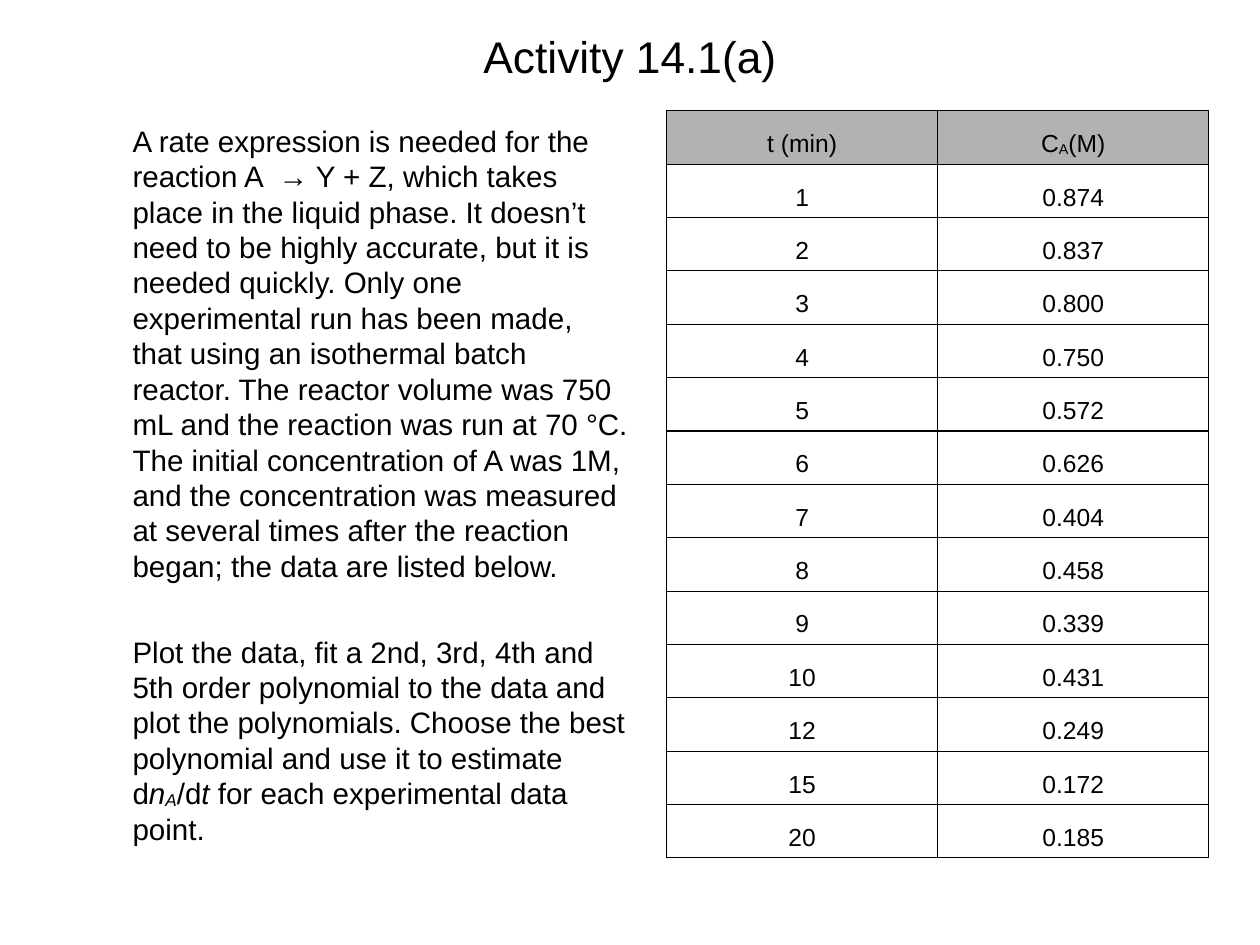
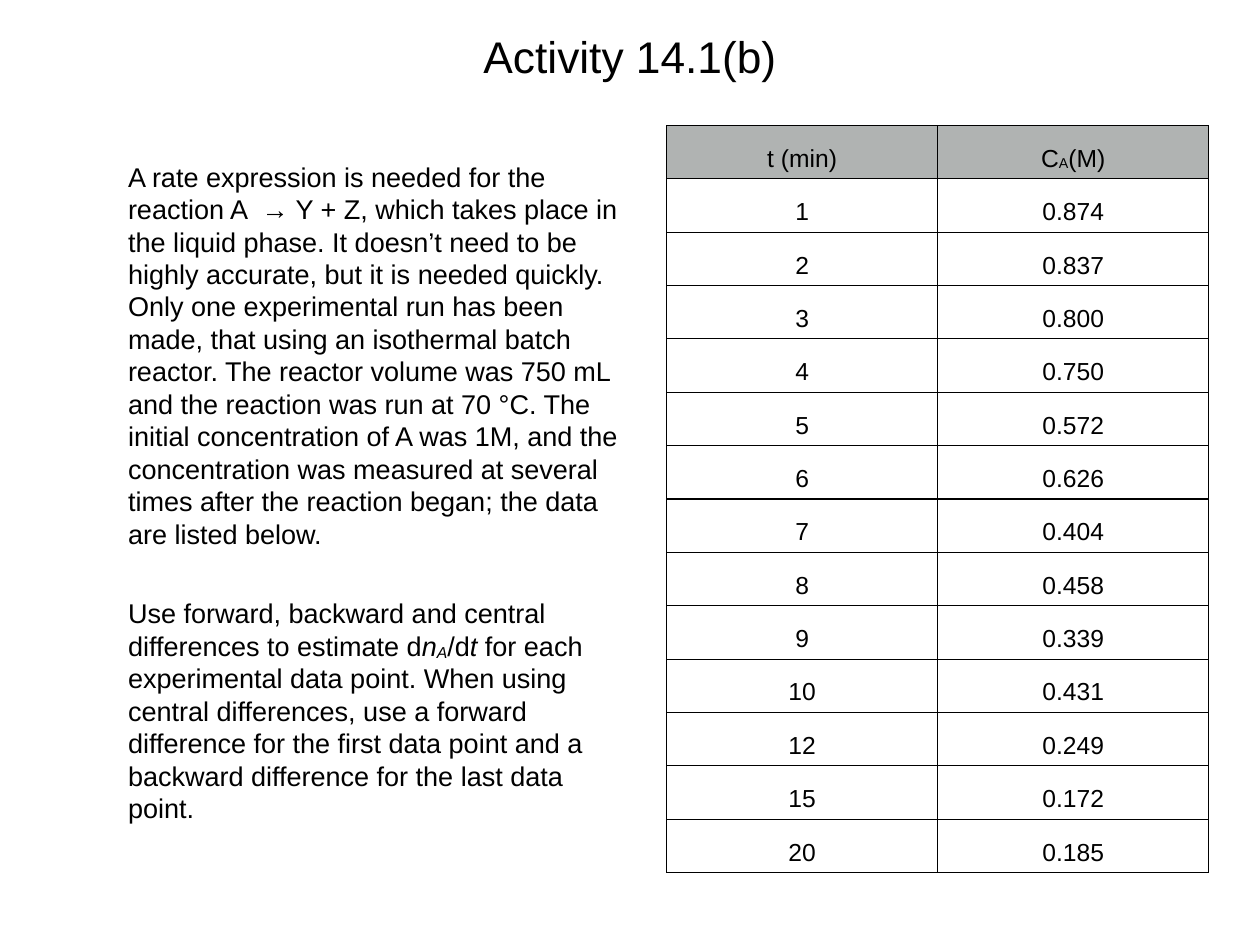
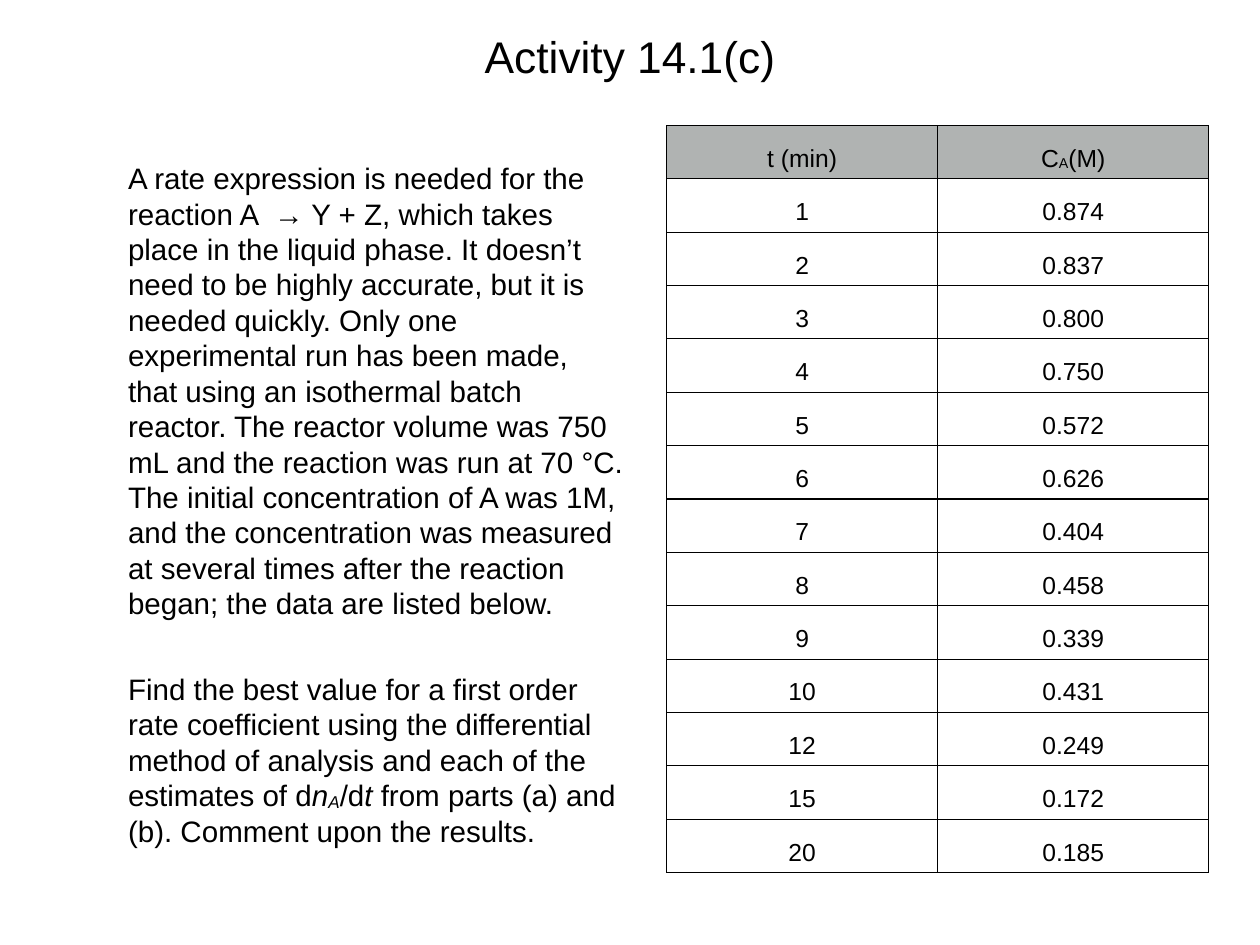
from dataclasses import dataclass

from lxml.etree import SubElement
from pptx import Presentation
from pptx.dml.color import RGBColor
from pptx.enum.text import MSO_ANCHOR, MSO_AUTO_SIZE, PP_ALIGN
from pptx.oxml.ns import qn
from pptx.util import Cm, Pt


@dataclass(frozen=True)
class Theme:
    font: str = "Arial"
    ink: RGBColor = RGBColor(0x00, 0x00, 0x00)
    paper: RGBColor = RGBColor(0xFF, 0xFF, 0xFF)
    head: RGBColor = RGBColor(0xB0, 0xB3, 0xB2)
    title: int = 36
    cell: int = 20
    lead: float = 1.0
    loose: float = 1.5


theme = Theme()

INTRO = (
    "A rate expression is needed for the reaction A  → Y + Z, which takes place "
    "in the liquid phase. It doesn’t need to be highly accurate, but it is needed "
    "quickly. Only one experimental run has been made, that using an isothermal "
    "batch reactor. The reactor volume was 750 mL and the reaction was run at "
    "70 °C. The initial concentration of A was 1M, and the concentration was "
    "measured at several times after the reaction began; the data are listed below."
)
# Each part is a text and its style: i for italic, s for subscript.
RATE = [("d", ""), ("n", "i"), ("A", "is"), ("/d", ""), ("t", "i")]
HEAD = [[("t (min)", "")], [("C", ""), ("A", "s"), ("(M)", "")]]
DATA = [
    ("1", "0.874"), ("2", "0.837"), ("3", "0.800"), ("4", "0.750"),
    ("5", "0.572"), ("6", "0.626"), ("7", "0.404"), ("8", "0.458"),
    ("9", "0.339"), ("10", "0.431"), ("12", "0.249"), ("15", "0.172"),
    ("20", "0.185"),
]
ROWS = [HEAD] + [[[(text, "")] for text in pair] for pair in DATA]

# Part, body left, body top, body size, table top, task before and after the rate
TASKS = [
    ("a", 3.66, 3.38, 24, 3.18,
     "Plot the data, fit a 2nd, 3rd, 4th and 5th order polynomial to the data and "
     "plot the polynomials. Choose the best polynomial and use it to estimate ",
     " for each experimental data point."),
    ("b", 3.53, 4.45, 22, 3.6,
     "Use forward, backward and central differences to estimate ",
     " for each experimental data point. When using central differences, use a "
     "forward difference for the first data point and a backward difference for "
     "the last data point."),
    ("c", 3.53, 4.45, 24, 3.6,
     "Find the best value for a first order rate coefficient using the "
     "differential method of analysis and each of the estimates of ",
     " from parts (a) and (b). Comment upon the results."),
]


def write(para, parts, size, lead=theme.lead):
    """Fill a paragraph with (text, style) parts."""
    para.line_spacing = lead
    for text, style in parts:
        run = para.add_run()
        run.text = text
        run.font.name = theme.font
        run.font.size = Pt(size)
        run.font.color.rgb = theme.ink
        run.font.italic = "i" in style
        if "s" in style:
            run.font._element.set("baseline", "-6000")


def place(shape, left, top, width, height):
    """Move a placeholder and give its text frame the shared insets."""
    shape.left, shape.top = Cm(left), Cm(top)
    shape.width, shape.height = Cm(width), Cm(height)
    frame = shape.text_frame
    frame.margin_left = frame.margin_right = Cm(0.14)
    frame.margin_top = frame.margin_bottom = Cm(0.14)
    frame.vertical_anchor = MSO_ANCHOR.TOP
    frame.auto_size = MSO_AUTO_SIZE.NONE
    frame.word_wrap = True
    return frame


deck = Presentation()
deck.slide_width, deck.slide_height = Cm(36.12), Cm(27.1)

for part, left, top, size, high, start, end in TASKS:
    slide = deck.slides.add_slide(deck.slide_layouts[1])

    title = place(slide.shapes.title, 3.53, 0.71, 29.06, 3.53).paragraphs[0]
    title.alignment = PP_ALIGN.CENTER
    write(title, [(f"Activity 14.1({part})", "")], theme.title)

    body = place(slide.placeholders[1], left, top, 14.53, 20.29)
    intro, task = body.paragraphs[0], body.add_paragraph()
    write(intro, [(INTRO, "")], size)
    write(task, [(start, ""), *RATE, (end, "")], size)
    intro.space_before = Pt(6)
    task.space_before = Pt(1.2 * size + 12)
    for para in body.paragraphs:
        props = para._p.get_or_add_pPr()
        props.set("marL", "0")
        props.set("indent", "0")
        SubElement(props, qn("a:buNone"))

    table = slide.shapes.add_table(
        len(ROWS), 2, Cm(19.11), Cm(high), Cm(15.54), Cm(1.53 * len(ROWS))
    ).table
    table.first_row = table.horz_banding = False
    for r, row in enumerate(ROWS):
        for c, parts in enumerate(row):
            cell = table.cell(r, c)
            cell.margin_left = cell.margin_right = Cm(0.18)
            cell.margin_top = cell.margin_bottom = Cm(0.17)
            para = cell.text_frame.paragraphs[0]
            para.alignment = PP_ALIGN.CENTER
            write(para, parts, theme.cell, theme.loose)
            props = cell._tc.get_or_add_tcPr()
            for side in ("a:lnL", "a:lnR", "a:lnT", "a:lnB"):
                line = SubElement(props, qn(side), w=str(Pt(1)))
                fill = SubElement(line, qn("a:solidFill"))
                SubElement(fill, qn("a:srgbClr"), val=str(theme.ink))
            cell.fill.solid()
            cell.fill.fore_color.rgb = theme.paper if r else theme.head

deck.save("out.pptx")
